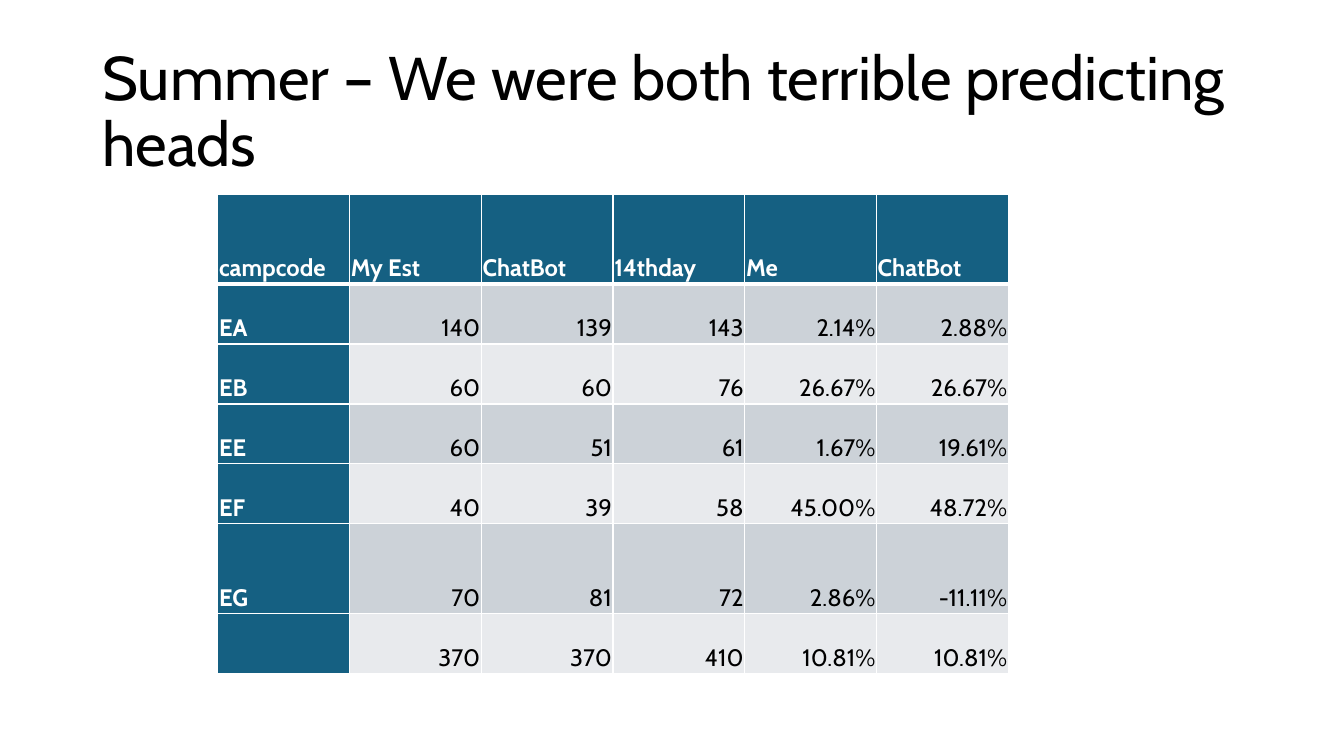
from dataclasses import dataclass

from lxml import etree
from pptx import Presentation
from pptx import util as u
from pptx.dml import color
from pptx.enum import text
from pptx.oxml import ns

FONT = "Cabin"
HUES = {
    "head": "156082",
    "odd": "CCD2D8",
    "even": "E8EAED",
    "white": "FFFFFF",
    "black": "000000",
}
TALL, LOW = 2.26, 1.51
WIDTH = 3.32
THIN, THICK = 1, 3
INSET = u.Cm(0.03)


@dataclass
class Row:
    height: float
    cells: tuple[str, ...]


@dataclass
class Look:
    size: int
    hue: str
    bold: bool
    align: text.PP_ALIGN
    space: float


ROWS = [
    Row(TALL, ("campcode", "My Est", "ChatBot", "14thday", "Me", "ChatBot")),
    Row(LOW, ("EA", "140", "139", "143", "2.14%", "2.88%")),
    Row(LOW, ("EB", "60", "60", "76", "26.67%", "26.67%")),
    Row(LOW, ("EE", "60", "51", "61", "1.67%", "19.61%")),
    Row(LOW, ("EF", "40", "39", "58", "45.00%", "48.72%")),
    Row(TALL, ("EG", "70", "81", "72", "2.86%", "-11.11%")),
    Row(LOW, ("", "370", "370", "410", "10.81%", "10.81%")),
]
TITLE = Look(44, "black", False, text.PP_ALIGN.LEFT, 0.9)
LABEL = Look(17, "white", True, text.PP_ALIGN.LEFT, 1.07)
VALUE = Look(17, "black", False, text.PP_ALIGN.RIGHT, 1.07)


def rgb(hue: str) -> color.RGBColor:
    return color.RGBColor.from_string(HUES[hue])


def assign(item, values: dict) -> None:
    for name, value in values.items():
        setattr(item, name, value)


def write(frame, words: str, look: Look) -> None:
    par = frame.paragraphs[0]
    assign(par, {"alignment": look.align, "line_spacing": look.space})
    par.font.size = u.Pt(look.size)
    if words:
        run = par.add_run()
        run.text = words
        assign(run.font, {"name": FONT, "size": u.Pt(look.size), "bold": look.bold})
        run.font.color.rgb = rgb(look.hue)


def edge(cell, side: str, points: int) -> None:
    """Add a white border on one side; call before the cell is filled."""
    props = cell._tc.get_or_add_tcPr()
    line = etree.SubElement(props, ns.qn(f"a:ln{side}"), w=str(u.Pt(points)))
    fill = etree.SubElement(line, ns.qn("a:solidFill"))
    etree.SubElement(fill, ns.qn("a:srgbClr"), val=HUES["white"])


def add_title(slide, words: str) -> None:
    box = slide.shapes.add_textbox(u.Cm(2.33), u.Cm(1.02), u.Cm(29.21), u.Cm(3.68))
    frame = box.text_frame
    assign(frame, {"word_wrap": True, "vertical_anchor": text.MSO_ANCHOR.MIDDLE})
    write(frame, words, TITLE)


def add_cell(cell, words: str, r: int, c: int) -> None:
    label = r == 0 or c == 0
    assign(cell, {
        "margin_left": INSET,
        "margin_top": INSET,
        "margin_right": INSET,
        "margin_bottom": INSET,
        "vertical_anchor": text.MSO_ANCHOR.BOTTOM,
    })
    write(cell.text_frame, words, LABEL if label else VALUE)
    heavy = {"T": r == 1, "B": r == 0}
    for side in "LRTB":
        edge(cell, side, THICK if heavy.get(side) else THIN)
    cell.fill.solid()
    band = "odd" if r % 2 else "even"
    cell.fill.fore_color.rgb = rgb("head" if label else band)


def add_grid(slide, rows: list[Row]) -> None:
    count = len(rows[0].cells)
    tall = sum(row.height for row in rows)
    grid = slide.shapes.add_table(
        len(rows), count, u.Cm(5.49), u.Cm(4.9), u.Cm(WIDTH * count), u.Cm(tall)
    ).table
    assign(grid, {"first_row": False, "horz_banding": False})
    for col in grid.columns:
        col.width = u.Cm(WIDTH)
    for r, row in enumerate(rows):
        grid.rows[r].height = u.Cm(row.height)
        for c, words in enumerate(row.cells):
            add_cell(grid.cell(r, c), words, r, c)


def main() -> None:
    deck = Presentation()
    assign(deck, {"slide_width": u.Cm(33.87), "slide_height": u.Cm(19.05)})
    slide = deck.slides.add_slide(deck.slide_layouts[6])
    add_title(slide, "Summer – We were both terrible predicting heads")
    add_grid(slide, ROWS)
    deck.save("out.pptx")


if __name__ == "__main__":
    main()
